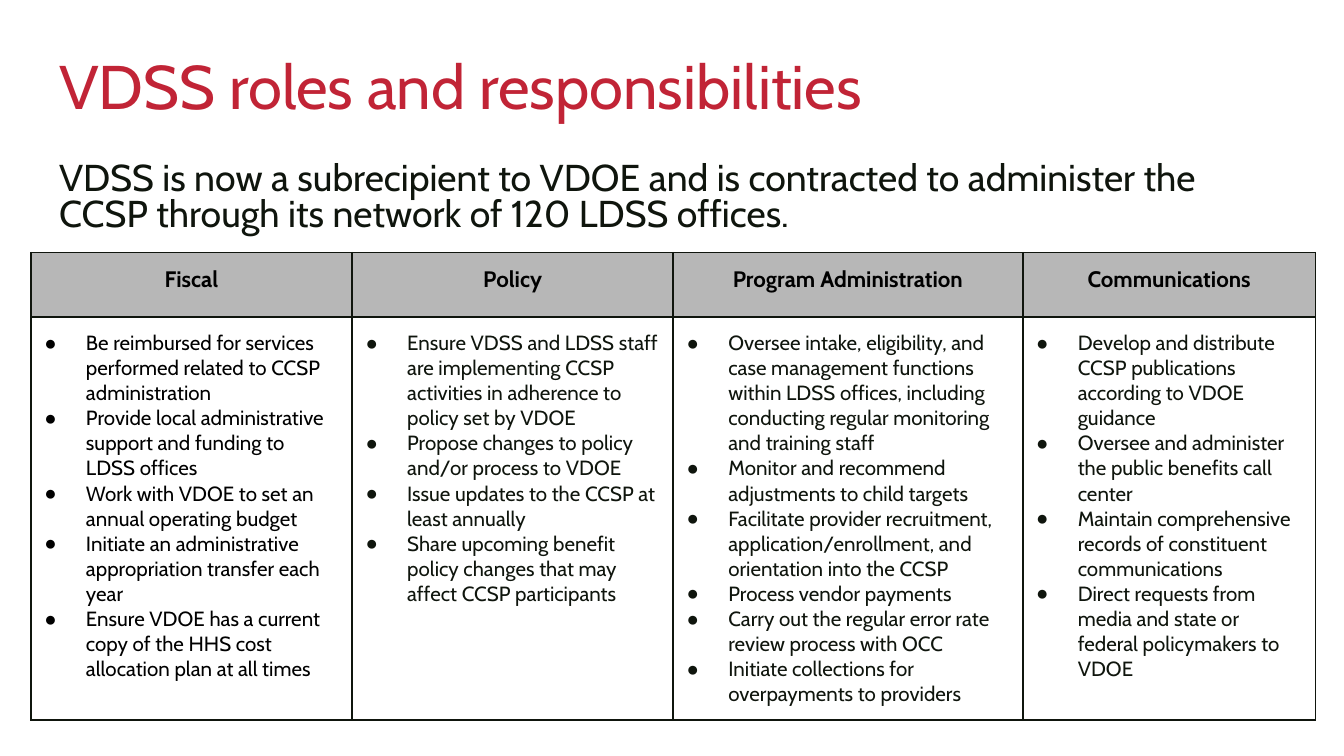
from lxml import etree
from pptx import Presentation
from pptx import util as u
from pptx.dml.color import RGBColor
from pptx.enum import text
from pptx.oxml import ns

FONT = "Cabin"
RED = RGBColor(0xC1, 0x24, 0x36)
INK = RGBColor(0x0F, 0x15, 0x0D)
BLACK = RGBColor(0, 0, 0)
GRAY = RGBColor(0xB7, 0xB7, 0xB7)

ROLES = [
    ("Fiscal", 2.39, BLACK, [
        "Be reimbursed for services performed related to CCSP administration",
        "Provide local administrative support and funding to LDSS offices",
        "Work with VDOE to set an annual operating budget",
        "Initiate an administrative appropriation transfer each year",
        "Ensure VDOE has a current copy of the HHS cost allocation plan at all times",
    ]),
    ("Policy", 2.39, INK, [
        "Ensure VDSS and LDSS staff are implementing CCSP activities in adherence to policy set by VDOE",
        "Propose changes to policy and/or process to VDOE",
        "Issue updates to the CCSP at least annually",
        "Share upcoming benefit policy changes that may affect CCSP participants",
    ]),
    ("Program Administration", 2.6, INK, [
        "Oversee intake, eligibility, and case management functions within LDSS offices, "
        "including conducting regular monitoring and training staff",
        "Monitor and recommend adjustments to child targets",
        "Facilitate provider recruitment, application/enrollment, and orientation into the CCSP",
        "Process vendor payments",
        "Carry out the regular error rate review process with OCC",
        "Initiate collections for overpayments to providers",
    ]),
    ("Communications", 2.18, INK, [
        "Develop and distribute CCSP publications according to VDOE guidance",
        "Oversee and administer the public benefits call center",
        "Maintain comprehensive records of constituent communications",
        "Direct requests from media and state or federal policymakers to VDOE",
    ]),
]


class Deck:
    def __init__(self, prs):
        self.s = prs.slides.add_slide(prs.slide_layouts[1])
        self.margin = u.Inches(0.1)

    def add(self, parent, tag, **attrs):
        el = etree.SubElement(parent, ns.qn(tag))
        for name, value in attrs.items():
            el.set(name, str(value))
        return el

    def font(self, p, size, color, bold=False):
        p.font.name = FONT
        p.font.size = u.Pt(size)
        p.font.bold = bold
        p.font.color.rgb = color

    def bullet(self, p, char=None, color=None, indent=0):
        pPr = p._p.get_or_add_pPr()
        pPr.set("marL", str(u.Inches(indent)))
        pPr.set("indent", str(-u.Inches(indent)))
        if char is None:
            self.add(pPr, "a:buNone")
            return
        self.add(self.add(pPr, "a:buClr"), "a:srgbClr", val=color)
        self.add(pPr, "a:buFont", typeface="Arial")
        self.add(pPr, "a:buChar", char=char)

    def placeholder(self, idx, box, words, size, color, spacing, after=0):
        sp = self.s.placeholders[idx]
        sp.left, sp.top, sp.width, sp.height = map(u.Inches, box)
        tf = sp.text_frame
        tf.margin_left = tf.margin_right = tf.margin_top = tf.margin_bottom = self.margin
        tf.auto_size = text.MSO_AUTO_SIZE.NONE
        tf.vertical_anchor = text.MSO_ANCHOR.TOP
        p = tf.paragraphs[0]
        p.text = words
        self.bullet(p)
        p.alignment = text.PP_ALIGN.LEFT
        p.line_spacing = spacing
        p.space_before = u.Pt(0)
        p.space_after = u.Pt(after)
        self.font(p, size, color)

    def cell(self, cell, fill=None):
        cell.margin_left = cell.margin_right = self.margin
        cell.margin_top = cell.margin_bottom = self.margin
        tcPr = cell._tc.get_or_add_tcPr()
        for side in ("a:lnL", "a:lnR", "a:lnT", "a:lnB"):
            ln = self.add(tcPr, side, w=u.Pt(1))
            self.add(self.add(ln, "a:solidFill"), "a:srgbClr", val=INK)
        if fill is None:
            cell.fill.background()
        else:
            cell.fill.solid()
            cell.fill.fore_color.rgb = fill
        return cell.text_frame

    def table(self, left, top, heights, columns):
        width = sum(column[1] for column in columns)
        frame = self.s.shapes.add_table(
            len(heights), len(columns), u.Inches(left), u.Inches(top),
            u.Inches(width), u.Inches(sum(heights)))
        table = frame.table
        table.first_row = table.horz_banding = False
        for row, height in zip(table.rows, heights):
            row.height = u.Inches(height)
        for i, (heading, width, color, items) in enumerate(columns):
            table.columns[i].width = u.Inches(width)
            p = self.cell(table.cell(0, i), GRAY).paragraphs[0]
            p.text = heading
            p.alignment = text.PP_ALIGN.CENTER
            self.font(p, 12, BLACK, True)
            tf = self.cell(table.cell(1, i))
            tf.text = "\n".join(items)
            for p in tf.paragraphs:
                self.bullet(p, "●", color, 0.31)
                self.font(p, 11, color)


def main():
    prs = Presentation()
    prs.slide_width = u.Inches(10)
    prs.slide_height = prs.slide_width * 9 // 16
    deck = Deck(prs)
    deck.placeholder(0, (0.34, 0.32, 9.32, 0.63),
                     "VDSS roles and responsibilities", 33, RED, 0.9)
    deck.placeholder(1, (0.34, 1.11, 9.32, 0.91),
                     "VDSS is now a subrecipient to VDOE and is contracted to administer the "
                     "CCSP through its network of 120 LDSS offices.", 20, INK, 0.8, 12)
    deck.table(0.23, 1.88, (0.48, 1.64), ROLES)
    prs.save("out.pptx")


if __name__ == "__main__":
    main()
